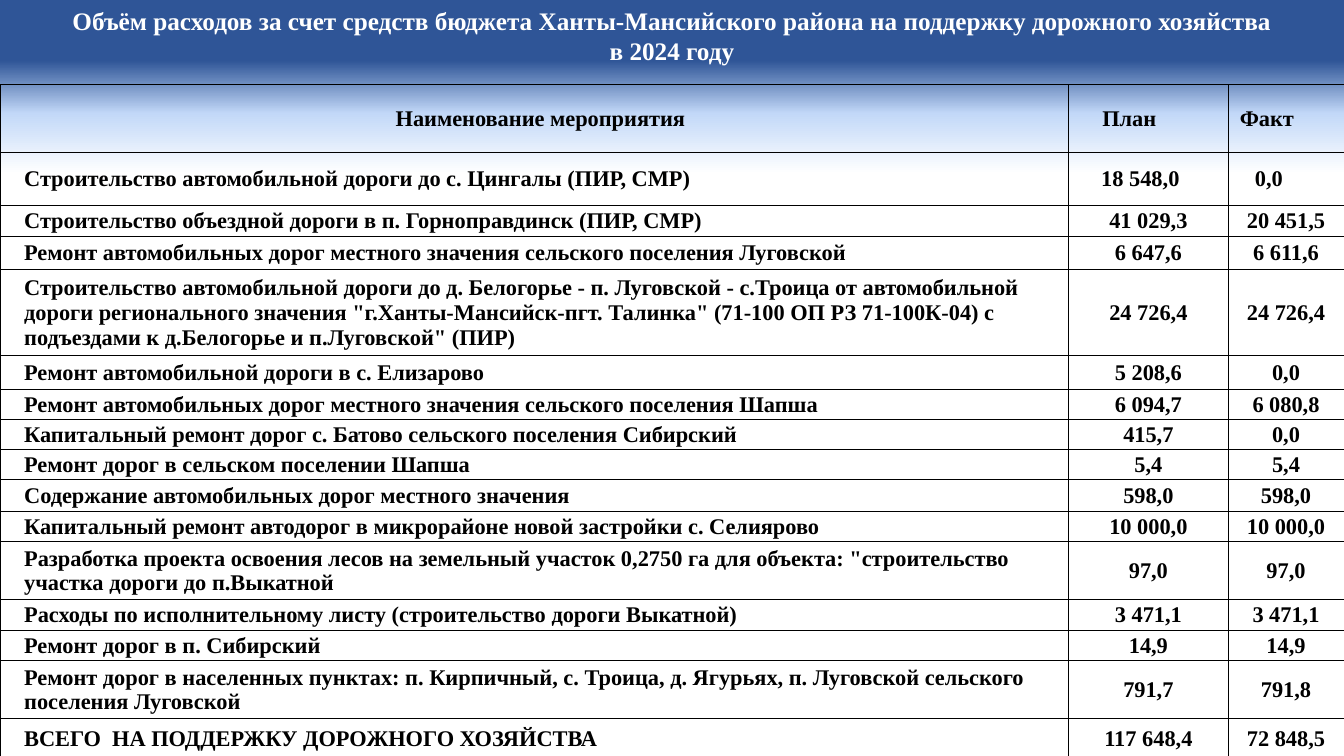
from copy import deepcopy

from lxml.etree import SubElement
from pptx import Presentation
from pptx.dml.color import RGBColor
from pptx.enum.text import MSO_ANCHOR as Anchor, PP_ALIGN as Align
from pptx.oxml.ns import qn
from pptx.util import Inches, Pt

BLUE = RGBColor(0x2F, 0x55, 0x97)
PALE_BLUE = RGBColor(0xC2, 0xD8, 0xF8)
WHITE = RGBColor(0xFF, 0xFF, 0xFF)
BLACK = RGBColor(0x00, 0x00, 0x00)
FONT = "Times New Roman"

TITLE_LINES = [
    "Объём расходов за счет средств бюджета Ханты-Мансийского района на поддержку дорожного хозяйства",
    "в 2024 году",
]
ROWS = [
    (0.67, "Наименование мероприятия", "План", "Факт"),
    (0.53, "Строительство автомобильной дороги до с. Цингалы (ПИР, СМР)", "18 548,0", "0,0"),
    (0.3, "Строительство объездной дороги в п. Горноправдинск (ПИР, СМР)", "41 029,3", "20 451,5"),
    (0.33, "Ремонт автомобильных дорог местного значения сельского поселения Луговской", "6 647,6", "6 611,6"),
    (0.86, "Строительство автомобильной дороги до д. Белогорье - п. Луговской - с.Троица от автомобильной "
           "дороги регионального значения \"г.Ханты-Мансийск-пгт. Талинка\" (71-100 ОП РЗ 71-100К-04) с "
           "подъездами к д.Белогорье и п.Луговской\" (ПИР)", "24 726,4", "24 726,4"),
    (0.33, "Ремонт автомобильной дороги в с. Елизарово", "5 208,6", "0,0"),
    (0.3, "Ремонт автомобильных дорог местного значения сельского поселения Шапша", "6 094,7", "6 080,8"),
    (0.3, "Капитальный ремонт дорог с. Батово сельского поселения Сибирский", "415,7", "0,0"),
    (0.3, "Ремонт дорог в сельском поселении Шапша", "5,4", "5,4"),
    (0.31, "Содержание автомобильных дорог местного значения", "598,0", "598,0"),
    (0.3, "Капитальный ремонт автодорог в микрорайоне новой застройки с. Селиярово", "10 000,0", "10 000,0"),
    (0.58, "Разработка проекта освоения лесов на земельный участок 0,2750 га для объекта: \"строительство "
           "участка дороги до п.Выкатной", "97,0", "97,0"),
    (0.3, "Расходы по исполнительному листу (строительство дороги Выкатной)", "3 471,1", "3 471,1"),
    (0.3, "Ремонт дорог в п. Сибирский", "14,9", "14,9"),
    (0.58, "Ремонт дорог в населенных пунктах: п. Кирпичный, с. Троица, д. Ягурьях, п. Луговской сельского "
           "поселения Луговской", "791,7", "791,8"),
    (0.4, "ВСЕГО  НА ПОДДЕРЖКУ ДОРОЖНОГО ХОЗЯЙСТВА", "117 648,4", "72 848,5"),
]
COLUMN_WIDTHS = [10.6, 1.58, 1.15]
RIGHT_MARGINS = {(0, 1): 0.39, (0, 2): 0.39, (1, 1): 0.17, (1, 2): 0.35}


def add_text(paragraph, text, size, color, alignment):
    paragraph.alignment = alignment
    run = paragraph.add_run()
    run.text = text
    run.font.name = FONT
    run.font.size = Pt(size)
    run.font.bold = True
    run.font.color.rgb = color


def add_borders(cell):
    properties = cell._tc.get_or_add_tcPr()
    for position, side in enumerate(["a:lnL", "a:lnR", "a:lnT", "a:lnB"]):
        line = SubElement(properties, qn(side), w=str(Pt(0.5)))
        fill = SubElement(line, qn("a:solidFill"))
        SubElement(fill, qn("a:srgbClr"), val=str(BLACK))
        properties.insert(position, line)


presentation = Presentation()
presentation.slide_width = Inches(13.33)
presentation.slide_height = Inches(7.5)
slide = presentation.slides.add_slide(presentation.slide_layouts[5])

background = slide.background.fill
background.gradient()
background.gradient_angle = 270
stop_list = slide.element.find(".//" + qn("a:gsLst"))
stop_list.append(deepcopy(stop_list[-1]))
stops = [(0.08, BLUE), (0.15, PALE_BLUE), (0.23, WHITE)]
for stop, (position, color) in zip(background.gradient_stops, stops):
    stop.position = position
    stop.color.rgb = color

title = slide.shapes.title
title.left, title.top = Inches(0), Inches(0)
title.width, title.height = Inches(13.33), Inches(0.71)
title_frame = title.text_frame
title_frame.vertical_anchor = Anchor.TOP
for index, text in enumerate(TITLE_LINES):
    paragraph = title_frame.add_paragraph() if index else title_frame.paragraphs[0]
    add_text(paragraph, text, 18, WHITE, Align.CENTER)

table = slide.shapes.add_table(
    len(ROWS), len(COLUMN_WIDTHS), Inches(0), Inches(0.84), Inches(13.33), Inches(6.66)
).table
table.first_row = False
table.horz_banding = False
for column, width in zip(table.columns, COLUMN_WIDTHS):
    column.width = Inches(width)

for row_index, (height, *texts) in enumerate(ROWS):
    table.rows[row_index].height = Inches(height)
    for column_index, text in enumerate(texts):
        cell = table.cell(row_index, column_index)
        is_name = column_index == 0
        cell.vertical_anchor = Anchor.MIDDLE
        cell.margin_left = Inches(0.24 if is_name else 0.01)
        cell.margin_right = Inches(
            0.12 if is_name else RIGHT_MARGINS.get((row_index, column_index), 0.01)
        )
        cell.margin_top, cell.margin_bottom = Inches(0.01), Inches(0)
        cell.fill.background()
        add_borders(cell)
        alignment = Align.LEFT if is_name and row_index else Align.CENTER
        add_text(cell.text_frame.paragraphs[0], text, 16, BLACK, alignment)

presentation.save("out.pptx")
